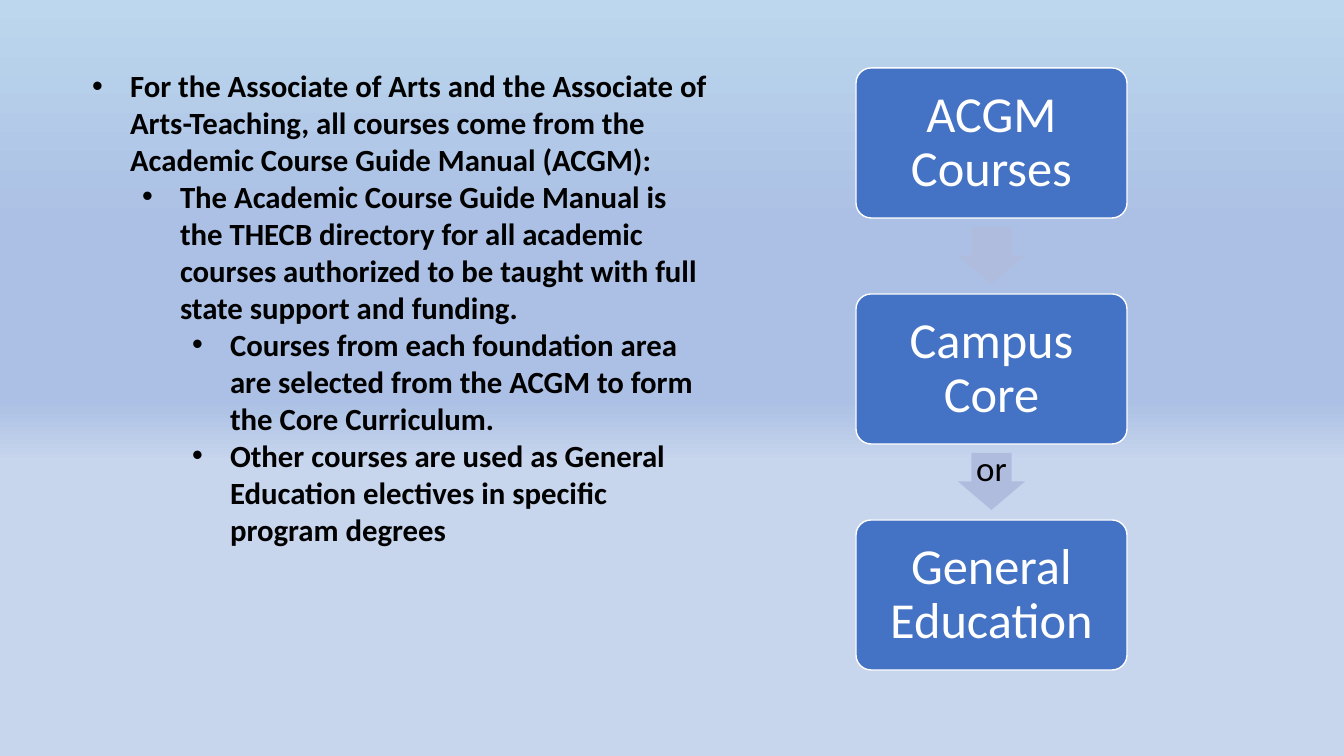
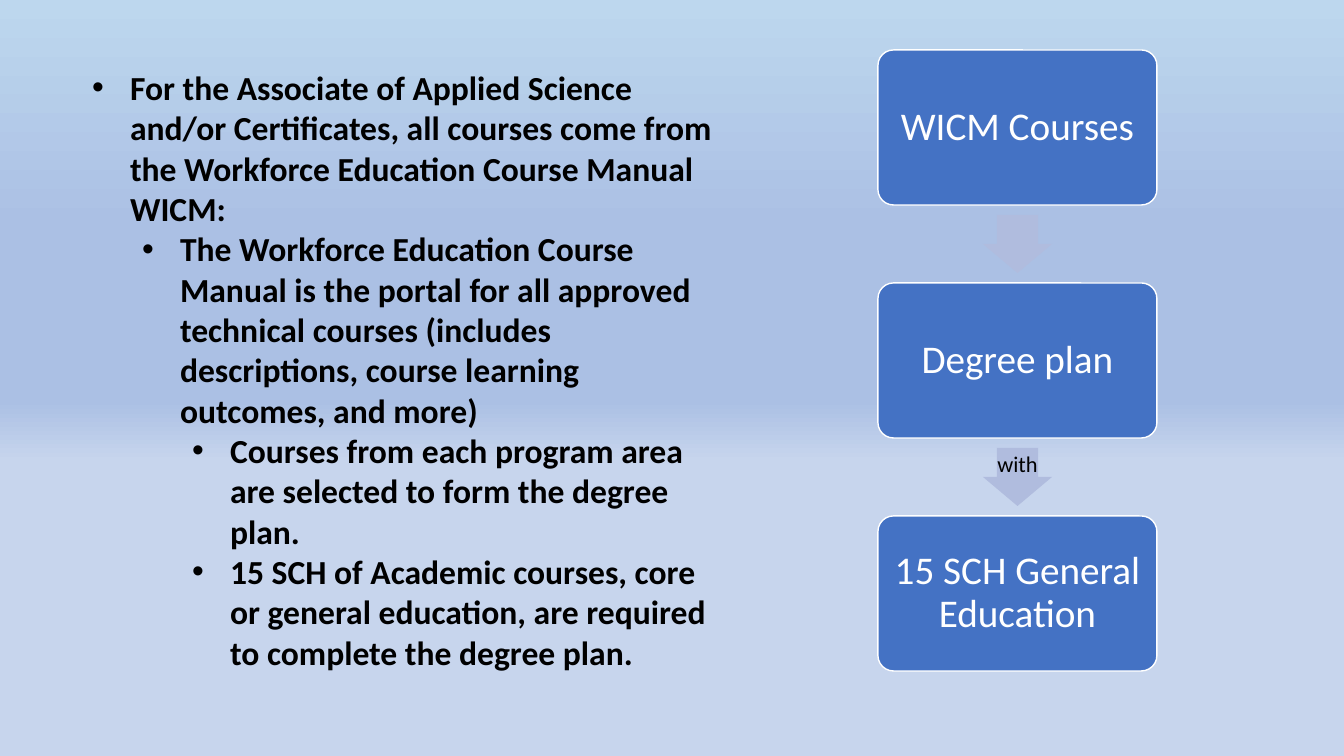
"""Builds two slides that explain where academic and workforce courses come from."""
from lxml import etree
from pptx import Presentation, util as u
from pptx.dml.color import RGBColor
from pptx.enum import shapes, text
from pptx.oxml.ns import qn

SCALE = 914400 / 100.8
FONT = "Calibri"
COLORS = {
    "card": "4472C4",
    "arrow": "B0BCDE",
    "light": "FFFFFF",
    "dark": "000000",
    "sky": "BDD7EE",
    "band": "ABC0E4",
    "ground": "C7D5ED",
}
BACKDROP = [(0, "sky"), (30, "band"), (53, "band"), (61, "ground")]

PAGES = [
    {
        "bullet_size": 22,
        "bullets": [
            (0, "For the Associate of Arts and the Associate of Arts-Teaching, all courses "
                "come from the Academic Course Guide Manual (ACGM):"),
            (1, "The Academic Course Guide Manual is the THECB directory for all academic "
                "courses authorized to be taught with full state support and funding."),
            (2, "Courses from each foundation area are selected from the ACGM to form "
                "the Core Curriculum."),
            (2, "Other courses are used as General Education electives in specific "
                "program degrees"),
        ],
        "steps": ["ACGM Courses", "Campus Core", "General Education"],
        "links": ["", "or"],
        "card": (856, 68, 271, 150),
        "gap": 76, "inset": 15, "step_size": 36, "link_size": 25,
    },
    {
        "bullet_size": 24,
        "bullets": [
            (0, "For the Associate of Applied Science and/or Certificates, all courses "
                "come from the Workforce Education Course Manual WICM:"),
            (1, "The Workforce Education Course Manual is the portal for all approved "
                "technical courses (includes descriptions, course learning outcomes, "
                "and more)"),
            (2, "Courses from each program area are selected to form the degree plan."),
            (2, "15 SCH of Academic courses, core or general education, are required "
                "to complete the degree plan."),
        ],
        "steps": ["WICM Courses", "Degree plan", "15 SCH General Education"],
        "links": ["", "with"],
        "card": (878, 50, 279, 155),
        "gap": 78, "inset": 12, "step_size": 28, "link_size": 16,
    },
]


def px(length):
    return u.Emu(round(length * SCALE))


def add_block(slide, preset, box, fill, wording, size, color, insets):
    block = slide.shapes.add_shape(preset, *map(px, box))
    block.shadow.inherit = False
    block.fill.solid()
    block.fill.fore_color.rgb = RGBColor.from_string(COLORS[fill])
    block.line.fill.background()
    if wording:
        frame = block.text_frame
        frame.margin_left, frame.margin_top, frame.margin_right, frame.margin_bottom = map(px, insets)
        frame.vertical_anchor = text.MSO_ANCHOR.MIDDLE
        frame.word_wrap = fill == "card"
        line = frame.paragraphs[0]
        line.alignment = text.PP_ALIGN.CENTER
        line.line_spacing = 0.9
        run = line.add_run()
        run.text = wording
        run.font.name = FONT
        run.font.size = u.Pt(size)
        run.font.color.rgb = RGBColor.from_string(COLORS[color])
    return block


deck = Presentation()
deck.slide_width, deck.slide_height = px(1344), px(756)

master = deck.slide_master
backdrop = master.background.fill
backdrop.gradient()
backdrop.gradient_angle = 270
stops = master.element.xpath(".//p:bg//a:gsLst")[0]
for stop in list(stops):
    stops.remove(stop)
for percent, color in BACKDROP:
    stop = etree.SubElement(stops, qn("a:gs"), pos=str(percent * 1000))
    etree.SubElement(stop, qn("a:srgbClr"), val=COLORS[color])

for page in PAGES:
    slide = deck.slides.add_slide(deck.slide_layouts[1])
    heading = slide.shapes.title.element
    heading.getparent().remove(heading)

    body = slide.placeholders[1]
    body.left, body.top, body.width, body.height = map(px, (82, 62, 644, 645))
    body.text_frame.auto_size = text.MSO_AUTO_SIZE.NONE
    for index, (level, wording) in enumerate(page["bullets"]):
        bullet = body.text_frame.add_paragraph() if index else body.text_frame.paragraphs[0]
        bullet.level = level
        bullet.space_before = u.Pt(0)
        run = bullet.add_run()
        run.text = wording
        run.font.name = FONT
        run.font.size = u.Pt(page["bullet_size"])
        run.font.bold = True
        run.font.color.rgb = RGBColor.from_string(COLORS["dark"])
        layout = bullet._p.get_or_add_pPr()
        layout.set("marL", str(px(38 + 50 * level)))
        layout.set("indent", str(px(-38)))
        etree.SubElement(layout, qn("a:buFont"), typeface="Arial")
        etree.SubElement(layout, qn("a:buChar"), char="•")

    left, top, width, height = page["card"]
    gap = page["gap"]
    pitch = height + gap
    for index, step in enumerate(page["steps"]):
        card = add_block(slide, shapes.MSO_SHAPE.ROUNDED_RECTANGLE,
                         (left, top + index * pitch, width, height),
                         "card", step, page["step_size"], "light", [page["inset"]] * 4)
        card.adjustments[0] = 0.1
        card.line.color.rgb = RGBColor.from_string(COLORS["light"])
        card.line.width = u.Pt(1)

    arrow_width, arrow_height = width // 4, gap * 3 // 4
    arrow_left = left + (width - arrow_width) // 2
    arrow_top = top + height + (gap - arrow_height) // 2
    for index, link in enumerate(page["links"]):
        arrow = add_block(slide, shapes.MSO_SHAPE.DOWN_ARROW,
                          (arrow_left, arrow_top + index * pitch, arrow_width, arrow_height),
                          "arrow", link, page["link_size"], "dark", (0, 0, 0, 6))
        arrow.adjustments[0] = 0.6
        arrow.adjustments[1] = 0.5

deck.save("out.pptx")
